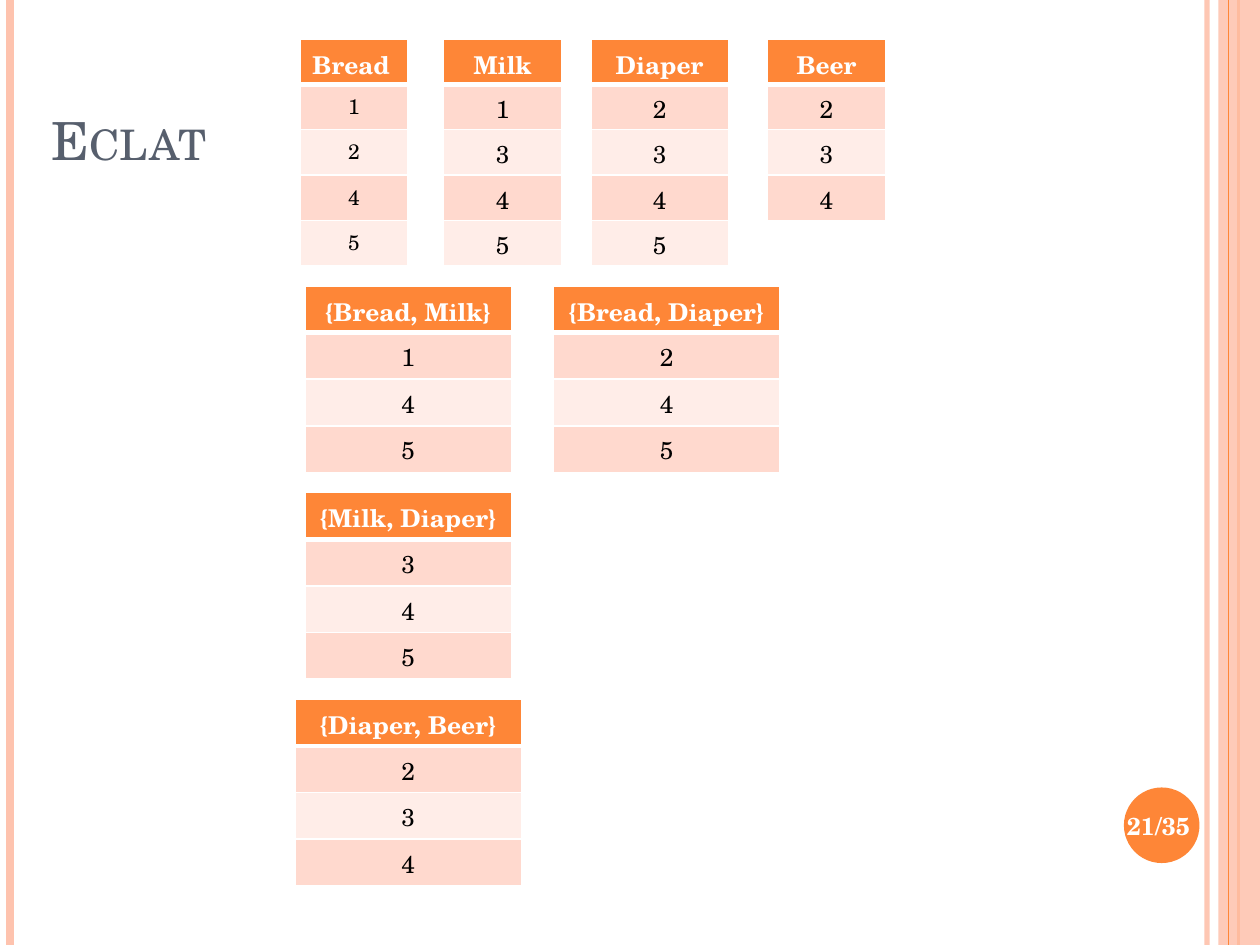
from lxml import etree
from pptx import Presentation
from pptx.dml.color import RGBColor
from pptx.enum.shapes import MSO_CONNECTOR as CONN, MSO_SHAPE as SHAPE
from pptx.enum.text import MSO_ANCHOR as ANCHOR, PP_ALIGN as ALIGN
from pptx.oxml.ns import qn
from pptx.util import Inches, Pt

FONT = "TeX Gyre Schola"
ORANGE, PEACH, WHITE, BLACK, SLATE = "FE8637", "FEC3AE", "FFFFFF", "000000", "575F6D"
BANDS = ("FFD9CE", "FFEDE8")
BORDERS = ("lnL", "lnR", "lnT", "lnB")


def rgb(value):
    return RGBColor.from_string(value)


def box(*lengths):
    return [Inches(n) for n in lengths]


class SlideBuilder:
    """Draws styled elements on the current slide."""

    def __init__(self, prs):
        self.s = prs.slides.add_slide(prs.slide_layouts[5])

    def run(self, p, text, size, color, bold=False, align=ALIGN.CENTER):
        p.alignment = align
        r = p.add_run()
        r.text = text
        r.font.name, r.font.size, r.font.bold = FONT, Pt(size), bold
        r.font.color.rgb = rgb(color)
        return r

    def fade(self, fill_parent, percent):
        clr = next(fill_parent.iter(qn("a:srgbClr")))
        etree.SubElement(clr, qn("a:alpha"), val=str(percent * 1000))

    def rule(self, x, color, width, opacity=100):
        sp = self.s.shapes.add_connector(CONN.STRAIGHT, *box(x, 0, x, 7.5))
        sp.line.color.rgb, sp.line.width = rgb(color), Pt(width)
        if opacity < 100:
            self.fade(sp.line._ln, opacity)
        etree.SubElement(sp._element.spPr, qn("a:effectLst"))

    def shape(self, kind, at, color, opacity=100):
        sp = self.s.shapes.add_shape(kind, *box(*at))
        sp.shadow.inherit = False
        sp.fill.solid()
        sp.fill.fore_color.rgb = rgb(color)
        sp.line.fill.background()
        if opacity < 100:
            self.fade(sp._element.spPr, opacity)

    def title(self, text, at):
        sp = self.s.shapes.title
        sp.left, sp.top, sp.width, sp.height = box(*at)
        tf = sp.text_frame
        tf.vertical_anchor = ANCHOR.BOTTOM
        r = self.run(tf.paragraphs[0], text, 30, SLATE, align=ALIGN.LEFT)
        r.font._element.set("cap", "small")

    def text(self, text, at, size, color):
        tf = self.s.shapes.add_textbox(*box(*at)).text_frame
        tf.word_wrap = True
        tf.vertical_anchor = ANCHOR.MIDDLE
        self.run(tf.paragraphs[0], text, size, color, bold=True)

    def borders(self, cell, widths):
        tc_pr = cell._tc.get_or_add_tcPr()
        for tag, width in zip(BORDERS, widths):
            ln = etree.SubElement(tc_pr, qn("a:" + tag), w=str(Pt(width)))
            fill = etree.SubElement(ln, qn("a:solidFill"))
            etree.SubElement(fill, qn("a:srgbClr"), val=WHITE)

    def table(self, header, ids, x, y, width, row, size=14, align=ALIGN.CENTER):
        count = len(ids) + 1
        frame = self.s.shapes.add_table(count, 1, *box(x, y, width, row * count))
        for i, value in enumerate([header, *ids]):
            head = i == 0
            cell = frame.table.cell(i, 0)
            self.borders(cell, (1, 1, 3 if i == 1 else 1, 3 if head else 1))
            cell.fill.solid()
            cell.fill.fore_color.rgb = rgb(ORANGE if head else BANDS[(i - 1) % 2])
            self.run(cell.text_frame.paragraphs[0], value, 14 if head else size,
                     WHITE if head else BLACK, head, align if head else ALIGN.CENTER)


def main():
    prs = Presentation()
    prs.slide_width, prs.slide_height = box(10, 7.5)
    b = SlideBuilder(prs)

    b.rule(9.58, PEACH, 3, 93)
    b.rule(0.08, PEACH, 4.5)
    b.rule(9.83, ORANGE, 1.5)
    b.shape(SHAPE.RECTANGLE, (9.67, 0, 0.33, 7.5), PEACH, 87)
    b.rule(9.75, ORANGE, 0.75)
    b.shape(SHAPE.OVAL, (8.92, 6.25, 0.6, 0.6), ORANGE)
    b.title("Eclat", (0.31, 0.16, 8.17, 1.25))
    b.text("21/35", (8.83, 6.27, 0.73, 0.57), 14, WHITE)

    b.table("Bread", "1245", 2.38, 0.31, 0.86, 0.36, 12, ALIGN.LEFT)
    for item, ids, x, width in (
        ("Milk", "1345", 3.52, 0.94),
        ("Diaper", "2345", 4.69, 1.09),
        ("Beer", "234", 6.09, 0.94),
    ):
        b.table(item, ids, x, 0.31, width, 0.36)

    for pair, ids, x, level, width in (
        ("{Bread, Milk}", "145", 2.42, 0, 1.64),
        ("{Bread, Diaper}", "245", 4.39, 0, 1.8),
        ("{Milk, Diaper}", "345", 2.42, 1, 1.64),
        ("{Diaper, Beer}", "234", 2.34, 2, 1.8),
    ):
        b.table(pair, ids, x, 2.27 + 1.64 * level, width, 0.37)

    prs.save("out.pptx")


if __name__ == "__main__":
    main()
